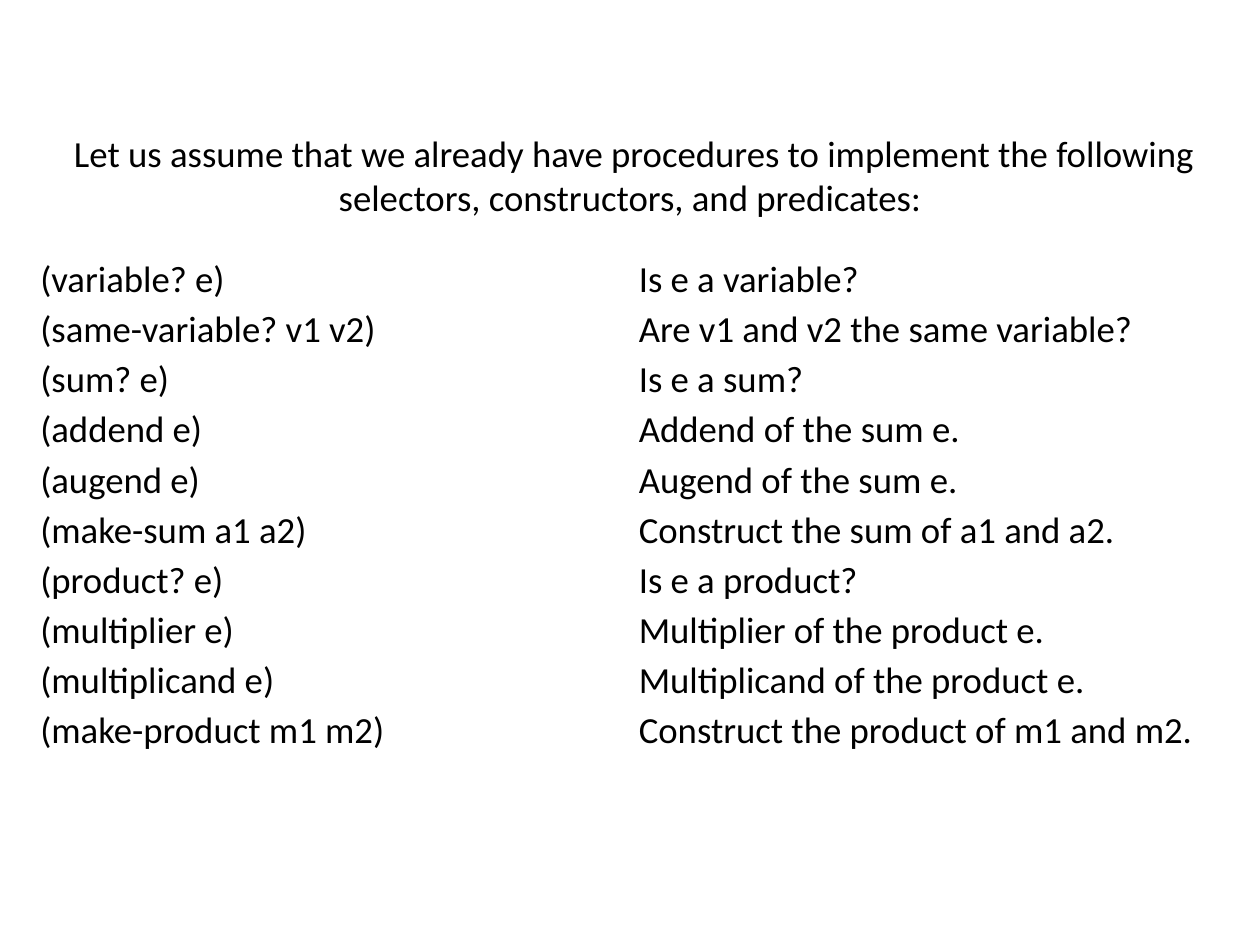
from pptx import Presentation
from pptx.dml.color import RGBColor
from pptx.enum.text import MSO_ANCHOR as Anchor, MSO_AUTO_SIZE as AutoSize, PP_ALIGN as Align
from pptx.util import Inches, Pt

PREMISE = (" Let us assume that we already have procedures to implement the following "
           "selectors, constructors, and predicates:")
PROCEDURES = [
    ("(variable? e)", "Is e a variable?"),
    ("(same-variable? v1 v2)", "Are v1 and v2 the same variable?"),
    ("(sum? e)", "Is e a sum?"),
    ("(addend e)", "Addend of the sum e."),
    ("(augend e)", "Augend of the sum e."),
    ("(make-sum a1 a2)", "Construct the sum of a1 and a2."),
    ("(product? e)", "Is e a product?"),
    ("(multiplier e)", "Multiplier of the product e."),
    ("(multiplicand e)", "Multiplicand of the product e."),
    ("(make-product m1 m2)", "Construct the product of m1 and m2."),
]


def color(hex_value):
    return RGBColor.from_string(hex_value)


def apply(target, formats):
    for attribute, value in formats.items():
        setattr(target, attribute, value)


class ProcedureSlide:
    WIDTH, HEIGHT = 10, 7.5
    FONT = {"name": "Calibri", "size": Pt(21), "bold": False}
    INK = "000000"
    TITLE_FRAME = {"word_wrap": True, "auto_size": AutoSize.NONE,
                   "vertical_anchor": Anchor.MIDDLE}
    CELL = {"vertical_anchor": Anchor.MIDDLE,
            **{f"margin_{side}": Inches(0.02) for side in ("left", "right", "top", "bottom")}}
    PLAIN_TABLE = {"first_row": False, "horz_banding": False}

    def __init__(self, deck):
        apply(deck, {"slide_width": Inches(self.WIDTH), "slide_height": Inches(self.HEIGHT)})
        self.slide = deck.slides.add_slide(deck.slide_layouts[5])

    def box(self, left, top, width, height):
        """Turn shares of the slide's size into lengths."""
        return (Inches(left * self.WIDTH), Inches(top * self.HEIGHT),
                Inches(width * self.WIDTH), Inches(height * self.HEIGHT))

    def add_wording(self, frame, wording, alignment):
        paragraph = frame.paragraphs[0]
        paragraph.alignment = alignment
        run = paragraph.add_run()
        run.text = wording
        apply(run.font, self.FONT)
        run.font.color.rgb = color(self.INK)

    def title(self, wording, *shares):
        heading = self.slide.shapes.title
        apply(heading, dict(zip(("left", "top", "width", "height"), self.box(*shares))))
        apply(heading.text_frame, self.TITLE_FRAME)
        self.add_wording(heading.text_frame, wording, Align.CENTER)

    def table(self, rows, *shares):
        grid = self.slide.shapes.add_table(len(rows), len(rows[0]), *self.box(*shares)).table
        apply(grid, self.PLAIN_TABLE)
        for cells, row in zip(grid.rows, rows):
            for cell, wording in zip(cells.cells, row):
                apply(cell, self.CELL)
                cell.fill.background()
                self.add_wording(cell.text_frame, wording, Align.LEFT)


def main():
    deck = Presentation()
    page = ProcedureSlide(deck)
    page.title(PREMISE, 0, 0.125, 1, 0.12)
    page.table(PROCEDURES, 0.03, 0.27, 0.95, 0.53)
    deck.save("out.pptx")


if __name__ == "__main__":
    main()
